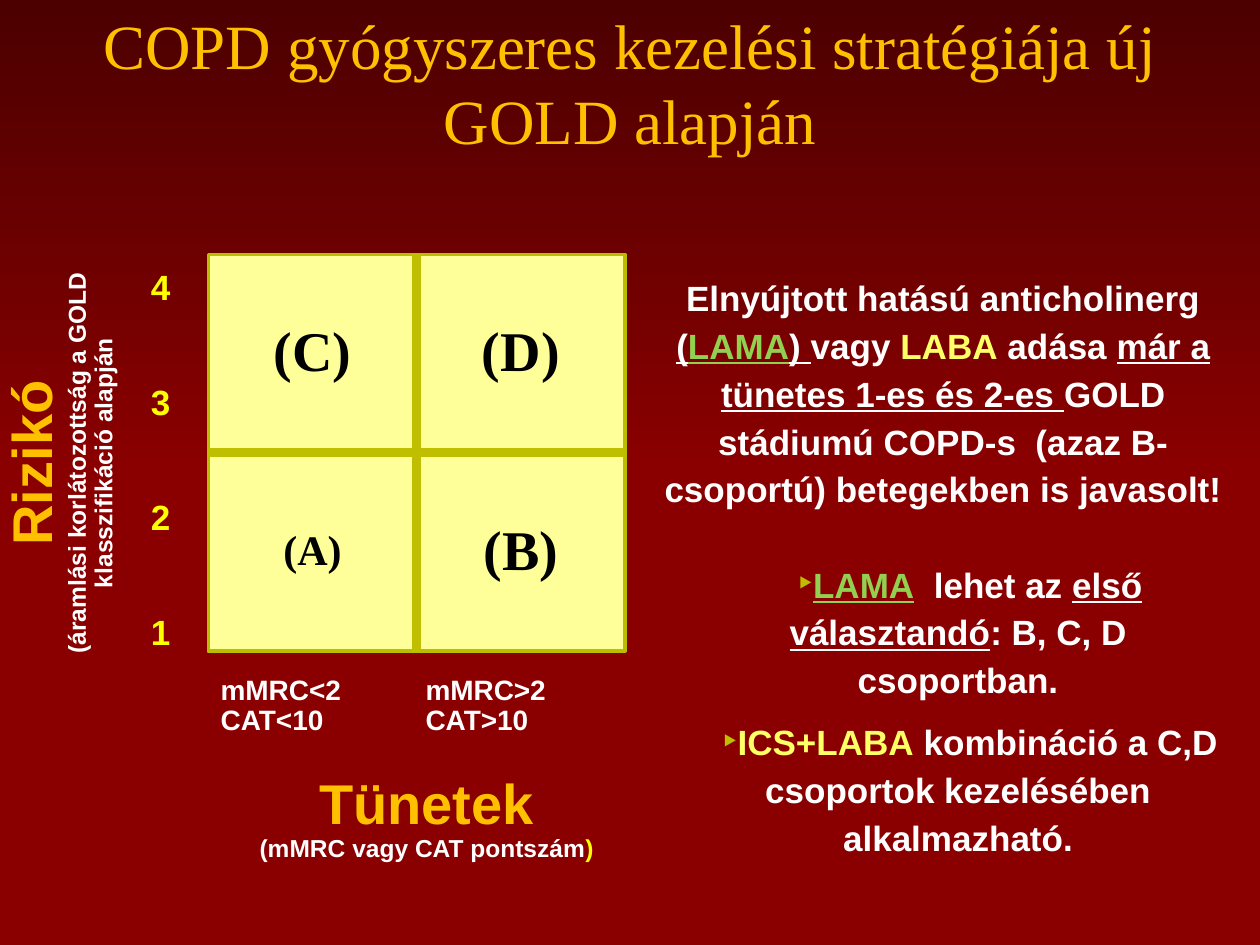
import pptx
import pptx.dml.color
import pptx.enum.shapes
import pptx.enum.text
import pptx.oxml.ns
import pptx.util
from lxml import etree

Cm = pptx.util.Cm
Pt = pptx.util.Pt
RGBColor = pptx.dml.color.RGBColor
PP_ALIGN = pptx.enum.text.PP_ALIGN
MSO_ANCHOR = pptx.enum.text.MSO_ANCHOR
MSO_AUTO_SIZE = pptx.enum.text.MSO_AUTO_SIZE
qn = pptx.oxml.ns.qn

DARK_RED = RGBColor(0x4C, 0x00, 0x00)
RED = RGBColor(0x8A, 0x00, 0x00)
AMBER = RGBColor(0xFF, 0xC0, 0x00)
PALE = RGBColor(0xFF, 0xFF, 0x99)
BORDER = RGBColor(0xBD, 0xBD, 0x00)
OLIVE = RGBColor(0xBF, 0xBF, 0x00)
BLACK = RGBColor(0x00, 0x00, 0x00)
WHITE = RGBColor(0xFF, 0xFF, 0xFF)
YELLOW = RGBColor(0xFF, 0xFF, 0x00)
LEMON = RGBColor(0xFF, 0xFF, 0x66)
GREEN = RGBColor(0x92, 0xD0, 0x50)

GRID_LEFT, GRID_TOP = 4.2, 5.13
CELL_W, CELL_H = 4.2, 4.0


def set_background(slide):
    fill = slide.background.fill
    fill.gradient()
    fill.gradient_angle = 270
    for stop, color, position in zip(fill.gradient_stops, (DARK_RED, RED), (0, 0.5)):
        stop.color.rgb = color
        stop.position = position


def add_textbox(slide, left, top, width, height, grow=True):
    sp = slide.shapes.add_textbox(Cm(left), Cm(top), Cm(width), Cm(height))
    tf = sp.text_frame
    tf.word_wrap = True
    if grow:
        tf.auto_size = MSO_AUTO_SIZE.SHAPE_TO_FIT_TEXT
    return tf


def format_run(r, size, color, font="Arial", bold=True, underline=None):
    r.font.size = Pt(size)
    r.font.name = font
    r.font.bold = bold
    r.font.underline = underline
    r.font.color.rgb = color


def add_paragraph(tf, runs, size, align=PP_ALIGN.CENTER, spacing=0.9):
    p = tf.add_paragraph() if tf.paragraphs[0].runs else tf.paragraphs[0]
    p.alignment = align
    p.line_spacing = spacing
    for text, color, *underline in runs:
        r = p.add_run()
        r.text = text
        format_run(r, size, color, underline=bool(underline))
    return p


def add_bullet(p):
    pPr = p._p.get_or_add_pPr()
    pPr.set("marL", str(Cm(0.6)))
    pPr.set("indent", str(Cm(0.48)))
    color = etree.SubElement(pPr, qn("a:buClr"))
    etree.SubElement(color, qn("a:srgbClr"), val=str(OLIVE))
    etree.SubElement(pPr, qn("a:buSzPct"), val="120000")
    etree.SubElement(pPr, qn("a:buFont"), typeface="Arial")
    etree.SubElement(pPr, qn("a:buChar"), char="‣")


def add_tab_stop(p, position):
    tabs = etree.SubElement(p._p.get_or_add_pPr(), qn("a:tabLst"))
    etree.SubElement(tabs, qn("a:tab"), pos=str(Cm(position)), algn="l")


def add_title(slide):
    tf = add_textbox(slide, 1.27, 0, 22.86, 4.93, grow=False)
    tf.text = "COPD gyógyszeres kezelési stratégiája új GOLD alapján"
    p = tf.paragraphs[0]
    p.alignment = PP_ALIGN.CENTER
    format_run(p.runs[0], 36, AMBER, "Times New Roman", bold=False)


def add_group_cell(slide, row, col, label, size):
    sp = slide.shapes.add_shape(
        pptx.enum.shapes.MSO_SHAPE.RECTANGLE,
        Cm(GRID_LEFT + col * CELL_W), Cm(GRID_TOP + row * CELL_H), Cm(CELL_W), Cm(CELL_H))
    sp.shadow.inherit = False
    sp.fill.solid()
    sp.fill.fore_color.rgb = PALE
    sp.line.color.rgb = BORDER
    sp.line.width = Pt(2)
    tf = sp.text_frame
    tf.vertical_anchor = MSO_ANCHOR.MIDDLE
    tf.text = label
    p = tf.paragraphs[0]
    p.alignment = PP_ALIGN.CENTER
    p.line_spacing = 0.9
    format_run(p.runs[0], size, BLACK, "Times New Roman")


def add_divider(slide, x1, y1, x2, y2):
    line = slide.shapes.add_connector(
        pptx.enum.shapes.MSO_CONNECTOR.STRAIGHT, Cm(x1), Cm(y1), Cm(x2), Cm(y2))
    line.line.color.rgb = OLIVE
    line.line.width = Pt(5)
    etree.SubElement(line._element.spPr, qn("a:effectLst"))


def add_grid(slide):
    cells = [("(C)", 32), ("(D)", 32), ("(A)", 24), ("(B)", 32)]
    for i, (label, size) in enumerate(cells):
        add_group_cell(slide, i // 2, i % 2, label, size)
    mid_x, mid_y = GRID_LEFT + CELL_W, GRID_TOP + CELL_H
    add_divider(slide, mid_x, GRID_TOP, mid_x, GRID_TOP + 2 * CELL_H)
    add_divider(slide, GRID_LEFT + 2 * CELL_W, mid_y, GRID_LEFT, mid_y)


def add_axes(slide):
    tf = add_textbox(slide, 4.2, 13.51, 8.61, 1.5)
    for text in ("mMRC<2\tmMRC>2", "CAT<10\tCAT>10"):
        add_tab_stop(add_paragraph(tf, [(text, WHITE)], 16, PP_ALIGN.LEFT), 4.13)

    tf = add_textbox(slide, 4.6, 15.52, 8, 2.03)
    add_paragraph(tf, [("Tünetek", AMBER)], 32)
    add_paragraph(tf, [("(mMRC vagy CAT pontszám", WHITE), (")", YELLOW)], 14)

    tf = add_textbox(slide, 2.79, 5.33, 1.19, 7.95)
    for stage in "4321":
        p = add_paragraph(tf, [(stage, YELLOW)], 20, PP_ALIGN.LEFT)
        p.space_before = Pt(0 if stage == "4" else 44)

    tf = add_textbox(slide, -0.18, 5.13, 2.82, 8.41)
    tf.vertical_anchor = MSO_ANCHOR.MIDDLE
    tf._txBody.bodyPr.set("vert", "vert270")
    add_paragraph(tf, [("Rizikó", AMBER)], 32)
    add_paragraph(tf, [("(áramlási korlátozottság a GOLD klasszifikáció alapján", WHITE)], 14)


def add_recommendations(slide):
    tf = add_textbox(slide, 13.11, 5.33, 11.81, 11.18)
    intro = [
        ("Elnyújtott hatású anticholinerg ", WHITE),
        ("(", WHITE, True), ("LAMA", GREEN, True), (") ", WHITE, True),
        ("vagy ", WHITE), ("LABA", LEMON), (" adása ", WHITE),
        ("már a tünetes 1-es és 2-es ", WHITE, True),
        ("GOLD stádiumú COPD-s  (azaz B-csoportú) betegekben is javasolt!", WHITE),
    ]
    bullets = [
        [("LAMA", GREEN, True), ("  lehet az ", WHITE),
         ("első választandó", WHITE, True), (": B, C, D csoportban.", WHITE)],
        [("ICS+LABA", LEMON),
         (" kombináció a C,D csoportok kezelésében alkalmazható.", WHITE)],
    ]
    add_paragraph(tf, intro, 20, spacing=1.14).space_after = Pt(27)
    for runs in bullets:
        p = add_paragraph(tf, runs, 20, spacing=1.14)
        p.space_after = Pt(8)
        add_bullet(p)


def main():
    prs = pptx.Presentation()
    prs.slide_width, prs.slide_height = Cm(25.4), Cm(19.05)
    slide = prs.slides.add_slide(prs.slide_layouts[6])
    set_background(slide)
    add_title(slide)
    add_grid(slide)
    add_axes(slide)
    add_recommendations(slide)
    prs.save("out.pptx")


if __name__ == "__main__":
    main()
